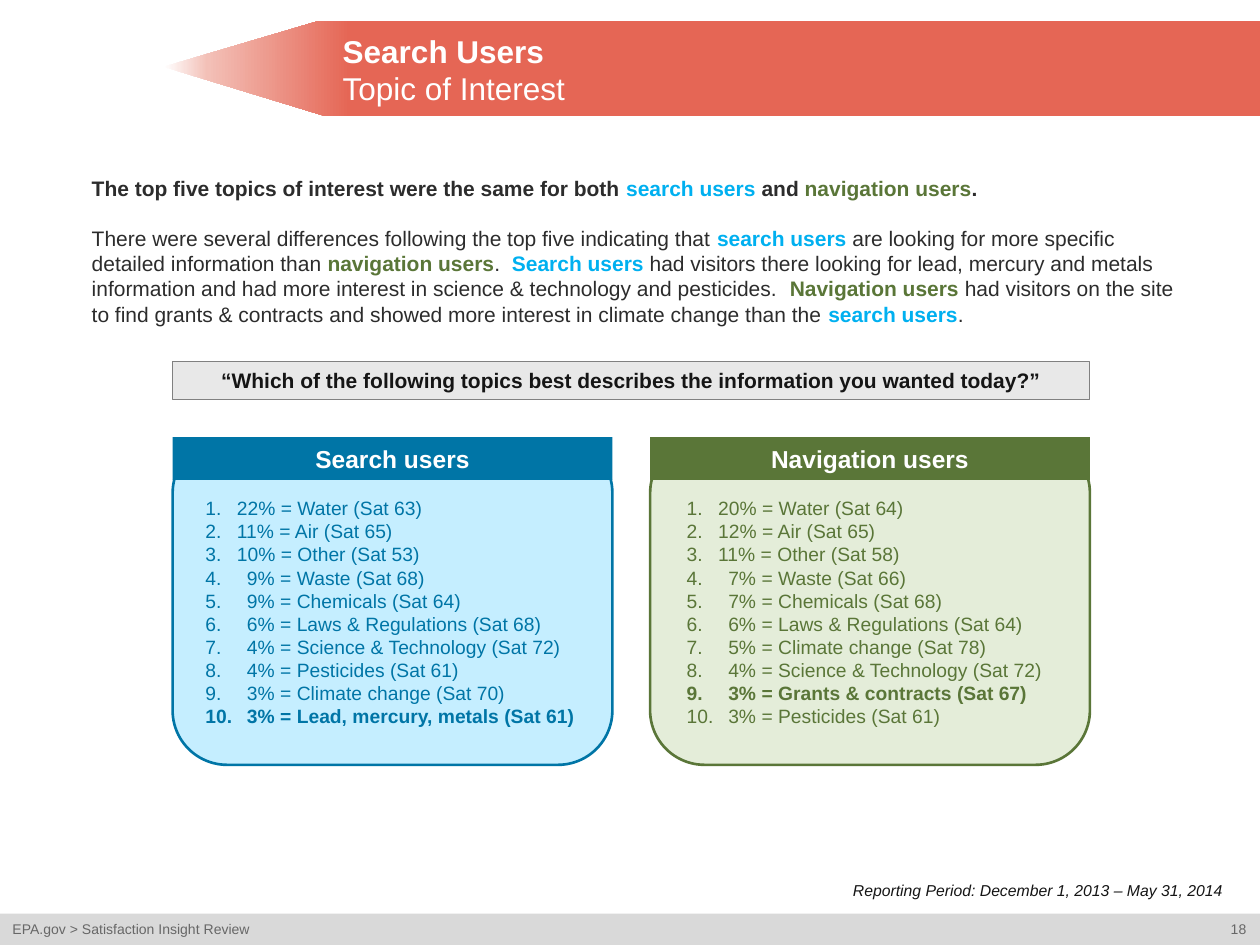
from collections import namedtuple
from dataclasses import dataclass

from lxml import etree
from pptx import Presentation
from pptx.dml.color import RGBColor
from pptx.enum.shapes import MSO_SHAPE
from pptx.enum.text import MSO_ANCHOR, MSO_AUTO_SIZE, PP_ALIGN
from pptx.oxml.ns import qn
from pptx.util import Inches, Pt

RECT, ROUND_RECT = MSO_SHAPE.RECTANGLE, MSO_SHAPE.ROUNDED_RECTANGLE
TOP, MIDDLE = MSO_ANCHOR.TOP, MSO_ANCHOR.MIDDLE
LEFT, CENTER, RIGHT = PP_ALIGN.LEFT, PP_ALIGN.CENTER, PP_ALIGN.RIGHT
NO_FIT = MSO_AUTO_SIZE.NONE
TWO_CONTENT = 3
SLIDE_W, SLIDE_H = 10, 7.5

Box = namedtuple("Box", "x y w h")
Panel = namedtuple("Panel", "title color tint list_inset items")


@dataclass(frozen=True)
class Theme:
    font: str = "Arial"
    white: str = "FFFFFF"
    banner: tuple = ((0, "FFFFFF"), (4, "F3C0B7"), (17, "E56655"))
    body: str = "2C2C2C"
    dark: str = "151515"
    muted: str = "676767"
    footer: str = "D9D9D9"
    question: str = "E8E8E8"
    question_line: str = "808080"
    sky: str = "00B0F0"
    blue: str = "0075A6"
    blue_tint: str = "C5EEFF"
    green: str = "5A7638"
    green_tint: str = "E4EDD9"
    title_size: int = 18
    header_size: int = 14
    body_size: int = 12
    list_size: int = 11
    note_size: int = 9
    footer_size: int = 8


T = Theme()

SEARCH = Panel("Search users", T.blue, T.blue_tint, 0.16, [
    "22% = Water (Sat 63)", "11% = Air (Sat 65)", "10% = Other (Sat 53)",
    "9% = Waste (Sat 68)", "9% = Chemicals (Sat 64)",
    "6% = Laws & Regulations (Sat 68)", "4% = Science & Technology (Sat 72)",
    "4% = Pesticides (Sat 61)", "3% = Climate change (Sat 70)",
    "*3% = Lead, mercury, metals (Sat 61)"])
NAVIGATION = Panel("Navigation users", T.green, T.green_tint, 0.19, [
    "20% = Water (Sat 64)", "12% = Air (Sat 65)", "11% = Other (Sat 58)",
    "7% = Waste (Sat 66)", "7% = Chemicals (Sat 68)",
    "6% = Laws & Regulations (Sat 64)", "5% = Climate change (Sat 78)",
    "4% = Science & Technology (Sat 72)",
    "*3% = Grants & contracts (Sat 67)", "3% = Pesticides (Sat 61)"])


def rgb(value):
    return RGBColor.from_string(value)


def emu(box):
    return [Inches(v) for v in box]


def add_run(p, text, size, color, bold=False, italic=False):
    r = p.add_run()
    r.text = text
    r.font.name, r.font.size = T.font, Pt(size)
    r.font.bold, r.font.italic = bold, italic
    r.font.color.rgb = rgb(color)


def set_frame(sp, anchor=TOP, wrap=True):
    tf = sp.text_frame
    tf.auto_size, tf.word_wrap, tf.vertical_anchor = NO_FIT, wrap, anchor
    return tf


def add_block(slide, kind, box, fill, line=None, width=0.75):
    sp = slide.shapes.add_shape(kind, *emu(box))
    sp.shadow.inherit = False
    sp.fill.solid()
    sp.fill.fore_color.rgb = rgb(fill)
    if line:
        sp.line.color.rgb = rgb(line)
        sp.line.width = Pt(width)
    else:
        sp.line.fill.background()
    return sp


def add_block_text(sp, text, size, color):
    p = set_frame(sp, MIDDLE).paragraphs[0]
    p.alignment = CENTER
    add_run(p, text, size, color, bold=True)


def add_label(slide, box, text, size, color, align=LEFT, italic=False, wrap=True):
    tf = set_frame(slide.shapes.add_textbox(*emu(box)), wrap=wrap)
    tf.paragraphs[0].alignment = align
    add_run(tf.paragraphs[0], text, size, color, italic=italic)


def place(ph, box):
    """Move a placeholder to the box and in front of the shapes drawn so far."""
    ph.left, ph.top, ph.width, ph.height = emu(box)
    ph.element.getparent().append(ph.element)


def add_banner(slide, box):
    shares = [(0, 0.48), (0.14, 0), (1, 0), (1, 1), (0.147, 1)]
    points = [(Inches(box.x + u * box.w), Inches(box.y + v * box.h)) for u, v in shares]
    builder = slide.shapes.build_freeform(*points[0])
    builder.add_line_segments(points[1:], close=True)
    sp = builder.convert_to_shape()
    sp.shadow.inherit = False
    sp.line.fill.background()
    sp.fill.gradient()
    sp.fill.gradient_angle = 0
    stops = sp.element.spPr.find(".//" + qn("a:gsLst"))
    for stop in list(stops):
        stops.remove(stop)
    for percent, color in T.banner:
        stop = etree.SubElement(stops, qn("a:gs"), pos=str(percent * 1000))
        etree.SubElement(stop, qn("a:srgbClr"), val=color)

    title = slide.shapes.title
    place(title, Box(box.x + 1.32, box.y + 0.01, 7.07, box.h - 0.01))
    p = set_frame(title, MIDDLE).paragraphs[0]
    p.alignment = LEFT
    add_run(p, "Search Users", T.title_size, T.white, bold=True)
    p.add_line_break()
    add_run(p, "Topic of Interest", T.title_size, T.white)


def add_footer(slide, box):
    add_block(slide, RECT, box, T.footer)
    add_label(slide, Box(box.x, box.y + 0.01, 2.12, 0.24),
              "EPA.gov > Satisfaction Insight Review", T.footer_size, T.muted, wrap=False)
    add_label(slide, Box(box.x + box.w - 0.34, box.y + 0.01, 0.34, 0.24),
              "18", T.footer_size, T.muted, CENTER, wrap=False)


def add_intro(slide, box):
    tf = set_frame(slide.shapes.add_textbox(*emu(box)))
    plain, strong = (T.body, False), (T.body, True)
    search, navigation = (T.sky, True), (T.green, True)
    paragraphs = [
        [("The top five topics of interest were the same for both ", strong),
         ("search users ", search), ("and ", strong),
         ("navigation users", navigation), (".", strong)],
        [("There were several differences following the top five indicating that ", plain),
         ("search users ", search),
         ("are looking for more specific detailed information than ", plain),
         ("navigation users", navigation), (".  ", plain), ("Search users ", search),
         ("had visitors there looking for lead, mercury and metals information and had "
          "more interest in science & technology and pesticides.  ", plain),
         ("Navigation users ", navigation),
         ("had visitors on the site to find grants & contracts and showed more interest "
          "in climate change than the ", plain),
         ("search users", search), (".", plain)],
    ]
    for i, runs in enumerate(paragraphs):
        p = tf.add_paragraph() if i else tf.paragraphs[0]
        if i:
            p.space_before = Pt(14.4)
        for text, (color, bold) in runs:
            add_run(p, text, T.body_size, color, bold)


def add_panel(slide, box, panel, ph):
    """Draw a headed card with a numbered list; a leading * marks a bold item."""
    add_block(slide, ROUND_RECT, box, panel.tint, panel.color, 1.5)
    header = add_block(slide, RECT, Box(box.x, box.y - 0.01, box.w, 0.34), panel.color)
    add_block_text(header, panel.title, T.header_size, T.white)
    place(ph, Box(box.x + panel.list_inset, box.y + 0.41, 3.2, 1.95))
    tf = set_frame(ph)
    for i, item in enumerate(panel.items):
        p = tf.add_paragraph() if i else tf.paragraphs[0]
        text = item.lstrip("*")
        indent = Inches(0.25 if text[1].isdigit() else 0.33)
        pPr = p._p.get_or_add_pPr()
        pPr.set("marL", str(indent))
        pPr.set("indent", str(-indent))
        etree.SubElement(pPr, qn("a:buFont"), typeface=T.font)
        etree.SubElement(pPr, qn("a:buAutoNum"), type="arabicPeriod")
        p.space_before = Pt(0)
        add_run(p, text, T.list_size, panel.color, bold=item.startswith("*"))


def main():
    prs = Presentation()
    prs.slide_width, prs.slide_height = Inches(SLIDE_W), Inches(SLIDE_H)
    slide = prs.slides.add_slide(prs.slide_layouts[TWO_CONTENT])
    lists = [slide.placeholders[1], slide.placeholders[2]]
    add_banner(slide, Box(1.3, 0.17, SLIDE_W - 1.3, 0.75))
    add_footer(slide, Box(0, SLIDE_H - 0.25, SLIDE_W, 0.25))
    add_intro(slide, Box(0.63, 1.34, 8.94, 1.31))

    left, width, gap = 1.37, 3.49, 0.3
    question = add_block(slide, RECT, Box(left, 2.87, 2 * width + gap, 0.3),
                         T.question, T.question_line)
    add_block_text(question, "“Which of the following topics best describes the "
                   "information you wanted today?”", T.body_size, T.dark)
    for i, panel in enumerate((SEARCH, NAVIGATION)):
        add_panel(slide, Box(left + i * (width + gap), 3.48, width, 2.59), panel, lists[i])
    add_label(slide, Box(6.25, 6.94, 3.55, 0.25),
              "Reporting Period: December 1, 2013 – May 31, 2014",
              T.note_size, T.dark, RIGHT, italic=True)
    prs.save("out.pptx")


if __name__ == "__main__":
    main()
